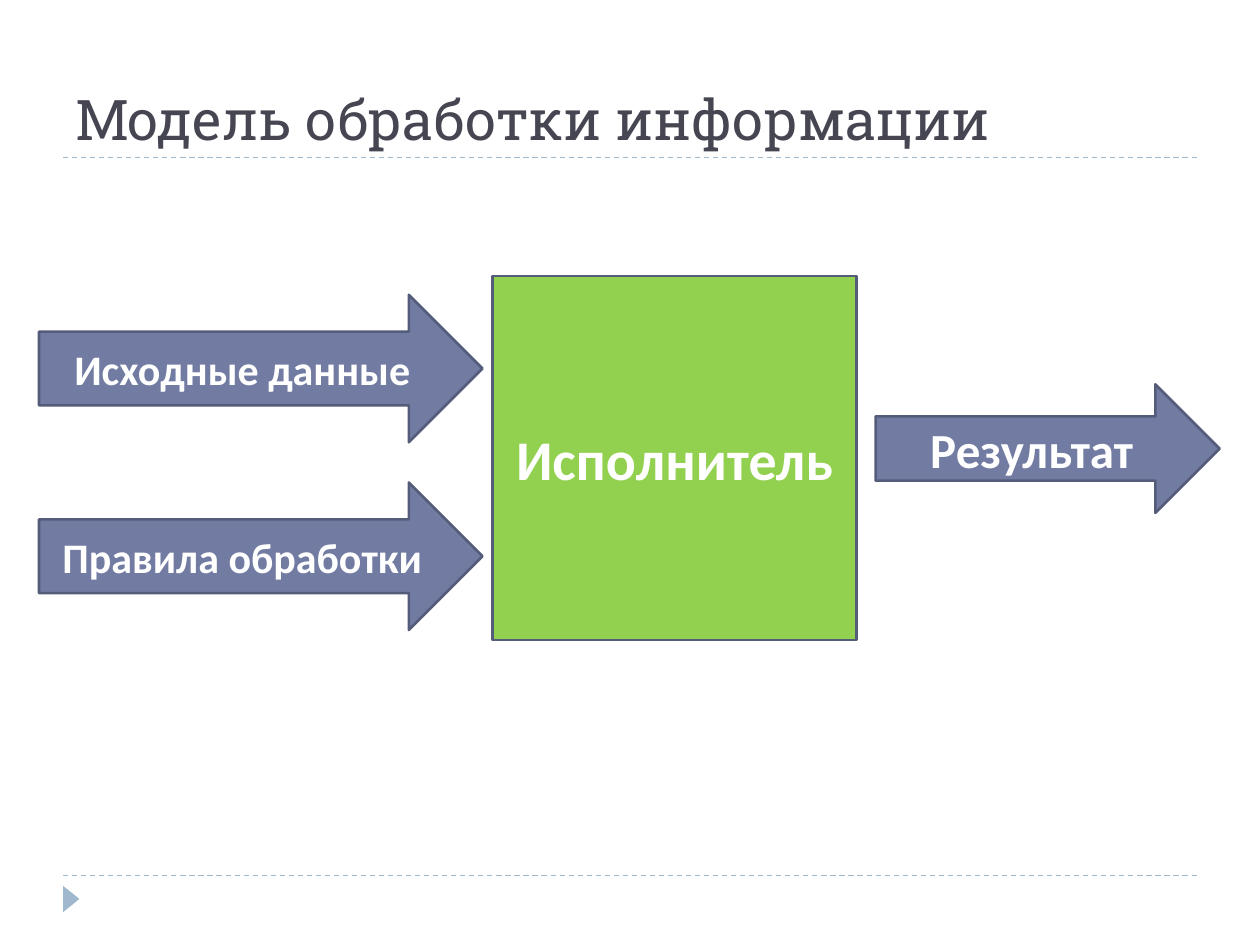
from dataclasses import dataclass

from lxml.etree import SubElement
from pptx import Presentation
from pptx.dml.color import RGBColor
from pptx.enum.dml import MSO_LINE
from pptx.enum.shapes import MSO_CONNECTOR, MSO_SHAPE
from pptx.enum.text import MSO_ANCHOR, PP_ALIGN
from pptx.oxml.ns import qn
from pptx.util import Inches, Pt

COLUMNS, ROWS = 100, 75  # grid over the whole slide
CELL = Inches(10) // COLUMNS


@dataclass(frozen=True)
class Theme:
    title_font: str = "Roboto Slab"
    body_font: str = "Calibri"
    title_color: str = "464653"
    label_color: str = "FFFFFF"
    arrow_fill: str = "727CA3"
    process_fill: str = "92D050"
    outline: str = "545C79"
    accent: str = "9FB8CD"
    title_size: int = 32
    process_size: int = 32
    result_size: int = 28
    input_size: int = 24
    outline_width: float = 1.5
    rule_width: float = 0.75


THEME = Theme()


@dataclass(frozen=True)
class Box:
    """An area of the slide, in grid columns and rows."""
    left: float
    top: float
    width: float
    height: float

    def inner(self, left, top, width, height):
        return Box(self.left + left, self.top + top, width, height)

    def lengths(self):
        return [round(value * CELL)
                for value in (self.left, self.top, self.width, self.height)]


def rgb(color):
    return RGBColor.from_string(color)


def write_text(shape, text, font, size, color, bold=False):
    frame = shape.text_frame
    frame.word_wrap = True
    frame.text = text
    para = frame.paragraphs[0]
    span = para.runs[0].font
    span.name, span.size, span.bold = font, Pt(size), bold
    span.color.rgb = rgb(color)
    return frame, para


def add_solid(page, kind, box, fill):
    shape = page.shapes.add_shape(kind, *box.lengths())
    shape.shadow.inherit = False
    shape.fill.solid()
    shape.fill.fore_color.rgb = rgb(fill)
    return shape


def add_block(page, kind, box, fill, text, size):
    block = add_solid(page, kind, box, fill)
    block.line.color.rgb = rgb(THEME.outline)
    block.line.width = Pt(THEME.outline_width)
    frame, para = write_text(block, text, THEME.body_font, size,
                             THEME.label_color, bold=True)
    frame.vertical_anchor = MSO_ANCHOR.MIDDLE
    para.alignment = PP_ALIGN.CENTER


def add_rule(page, box):
    """Dashed line along the top of the box."""
    left, top, width, _ = box.lengths()
    rule = page.shapes.add_connector(MSO_CONNECTOR.STRAIGHT,
                                     left, top, left + width, top)
    rule.line.color.rgb = rgb(THEME.accent)
    rule.line.width = Pt(THEME.rule_width)
    rule.line.dash_style = MSO_LINE.DASH
    SubElement(rule._element.spPr, qn("a:effectLst"))


def add_header(page, box):
    add_rule(page, box.inner(0, box.height, box.width, 0))
    title = page.shapes.add_textbox(*box.lengths())
    frame, _ = write_text(title, "Модель обработки информации",
                          THEME.title_font, THEME.title_size, THEME.title_color)
    frame.vertical_anchor = MSO_ANCHOR.BOTTOM


def add_footer(page, box):
    add_rule(page, box)
    marker = add_solid(page, MSO_SHAPE.ISOSCELES_TRIANGLE,
                       box.inner(-0.4, 1.2, 2.1, 1.3), THEME.accent)
    marker.line.fill.background()
    marker.rotation = 90


def add_process_diagram(page, box):
    # Inputs: equal arrows, one below the other
    for row, text in enumerate(("Исходные данные", "Правила обработки")):
        add_block(page, MSO_SHAPE.RIGHT_ARROW,
                  box.inner(0, 1.5 + row * 14.9, 35.2, 11.7),
                  THEME.arrow_fill, text, THEME.input_size)
    # Square executor, as tall as the diagram
    add_block(page, MSO_SHAPE.FLOWCHART_PROCESS,
              box.inner(36, 0, box.height, box.height),
              THEME.process_fill, "Исполнитель", THEME.process_size)
    # Output
    add_block(page, MSO_SHAPE.RIGHT_ARROW,
              box.inner(box.width - 27.3, 8.6, 27.3, 10.2),
              THEME.arrow_fill, "Результат", THEME.result_size)


def main():
    deck = Presentation()
    deck.slide_width, deck.slide_height = COLUMNS * CELL, ROWS * CELL
    page = deck.slides.add_slide(deck.slide_layouts[6])
    add_footer(page, Box(5, 69.5, 90, 5))
    add_header(page, Box(5, 1.7, 90, 10.8))
    add_process_diagram(page, Box(3.1, 21.9, 93.7, 28.9))
    deck.save("out.pptx")


if __name__ == "__main__":
    main()
